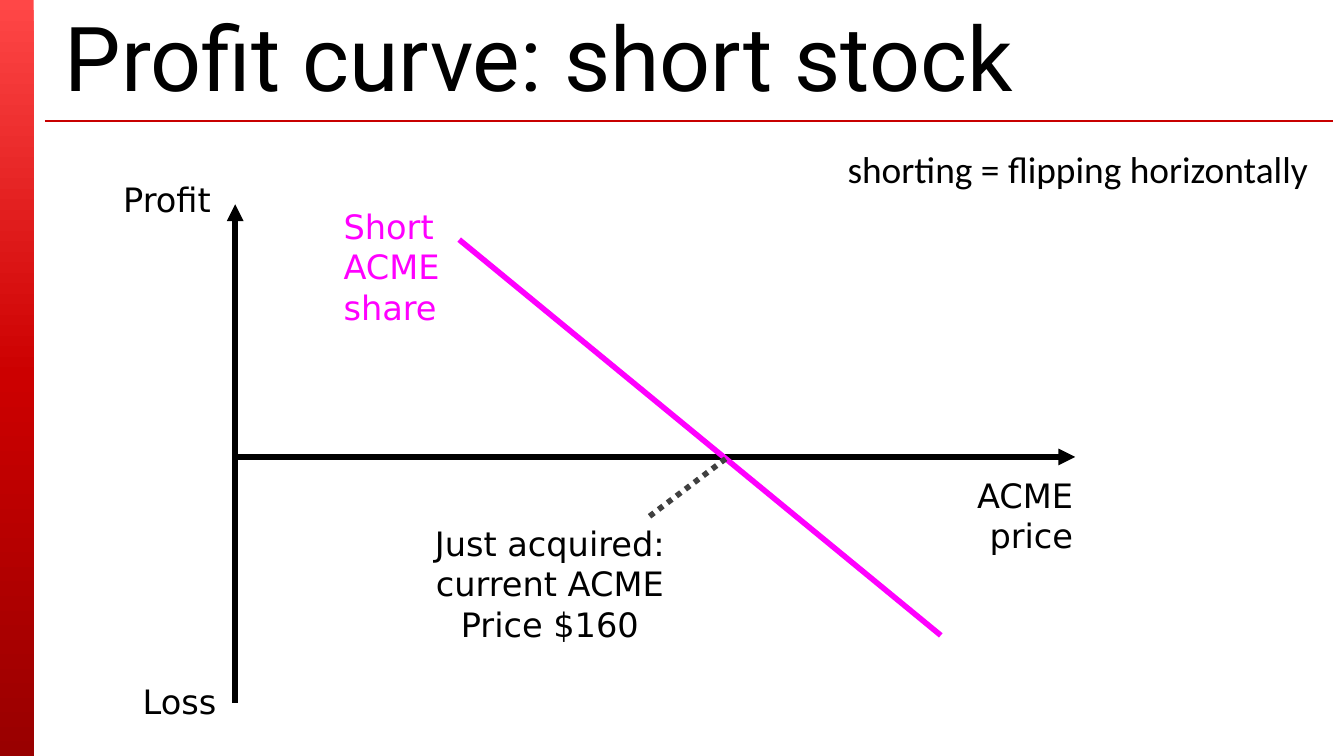
"""Build a slide showing the profit curve of a short stock position."""
from copy import deepcopy
from dataclasses import dataclass

from pptx import Presentation
from pptx.dml.color import RGBColor
from pptx.enum.dml import MSO_LINE
from pptx.enum.shapes import MSO_CONNECTOR, MSO_SHAPE
from pptx.enum.text import MSO_ANCHOR, MSO_AUTO_SIZE, PP_ALIGN
from pptx.oxml.ns import qn
from pptx.shapes.base import BaseShape
from pptx.slide import Slide
from pptx.text.text import TextFrame
from pptx.util import Pt


@dataclass(frozen=True)
class Theme:
    black: str = "000000"
    white: str = "FFFFFF"
    magenta: str = "FF00FF"
    gray: str = "404040"
    red: str = "C80000"
    band: tuple = ((0, "FF4747"), (0.5, "CC0000"), (1, "990000"))
    title_font: str = "Roboto"
    label_font: str = "DejaVu Sans"
    note_font: str = "Calibri"
    title_size: float = 48
    label_size: float = 18
    note_size: float = 20
    thick: float = 3
    thin: float = 0.75


T = Theme()


@dataclass(frozen=True)
class Label:
    lines: tuple
    box: tuple
    align: PP_ALIGN = PP_ALIGN.RIGHT
    color: str = T.black


@dataclass(frozen=True)
class Line:
    begin: tuple
    end: tuple
    color: str = T.black
    width: float = T.thick
    arrow: bool = False
    dotted: bool = False


W, H = 720, 405
ORIGIN = (126, 244.8)
PRICE = (390, 244.8)

RULE = Line((24, 64.8), (714, 64.8), T.red, T.thin)
LINES = (
    Line((ORIGIN[0], 109.5), (ORIGIN[0], 376.5), arrow=True),
    Line((576, ORIGIN[1]), ORIGIN, arrow=True),
    Line((246, 128.4), (504, 340.4), T.magenta),
    Line((348, 276.6), PRICE, T.gray, dotted=True),
)
LABELS = (
    Label(("ACME price",), (504, 250.8, 78, 51)),
    Label(("Short", "ACME share"), (177, 106.8, 108, 72.7), PP_ALIGN.LEFT, T.magenta),
    Label(("Just acquired: current ACME Price $160",), (216.6, 276.6, 156, 72.7), PP_ALIGN.CENTER),
    Label(("Profit",), (36, 92.4, 84, 29)),
    Label(("Loss",), (39, 361, 84, 29)),
)
NOTE = Label(("shorting = flipping horizontally",), (426, 74.2, 282, 32.4))


def rgb(color: str) -> RGBColor:
    """Turn a hex string into a colour."""
    return RGBColor.from_string(color)


def place(box: tuple) -> tuple:
    """Turn left, top, width and height into point lengths."""
    return tuple(Pt(v) for v in box)


def write(tf: TextFrame, label: Label, font: str, size: float, anchor: MSO_ANCHOR) -> None:
    """Fill a text frame with one paragraph per line of the label."""
    tf.word_wrap = True
    tf.auto_size = MSO_AUTO_SIZE.NONE
    tf.vertical_anchor = anchor
    for i, text in enumerate(label.lines):
        p = tf.add_paragraph() if i else tf.paragraphs[0]
        p.alignment = label.align
        r = p.add_run()
        r.text = text
        r.font.name = font
        r.font.size = Pt(size)
        r.font.color.rgb = rgb(label.color)


def add_rect(s: Slide, box: tuple) -> BaseShape:
    """Add a rectangle without shadow or outline."""
    sp = s.shapes.add_shape(MSO_SHAPE.RECTANGLE, *place(box))
    sp.shadow.inherit = False
    sp.line.fill.background()
    return sp


def add_band(s: Slide) -> None:
    """Add the red gradient band on the left edge."""
    sp = add_rect(s, (0, 0, 18, H))
    sp.fill.gradient()
    sp.fill.gradient_angle = 270
    stops = sp._element.spPr.find(qn("a:gradFill")).find(qn("a:gsLst"))
    stops.append(deepcopy(stops[0]))
    for stop, (position, color) in zip(sp.fill.gradient_stops, T.band):
        stop.position = position
        stop.color.rgb = rgb(color)


def add_line(s: Slide, line: Line) -> None:
    """Add a straight line, with an arrowhead at its beginning if asked."""
    cx = s.shapes.add_connector(MSO_CONNECTOR.STRAIGHT, *place(line.begin + line.end))
    cx.line.color.rgb = rgb(line.color)
    cx.line.width = Pt(line.width)
    if line.dotted:
        cx.line.dash_style = MSO_LINE.ROUND_DOT
    if line.arrow:
        ln = cx.line._get_or_add_ln()
        ln.append(ln.makeelement(qn("a:headEnd"), {"type": "triangle"}))
    spPr = cx._element.spPr
    spPr.append(spPr.makeelement(qn("a:effectLst"), {}))


def add_title(s: Slide, text: str) -> None:
    """Move and fill the title placeholder."""
    sp = s.shapes.title
    box = (27.4, 10.8, 690, 38.2)
    sp.left, sp.top, sp.width, sp.height = place(box)
    label = Label((text,), box, PP_ALIGN.LEFT)
    write(sp.text_frame, label, T.title_font, T.title_size, MSO_ANCHOR.MIDDLE)


def add_label(s: Slide, label: Label) -> None:
    """Add a text box for a part of the diagram."""
    sp = s.shapes.add_textbox(*place(label.box))
    write(sp.text_frame, label, T.label_font, T.label_size, MSO_ANCHOR.TOP)


def add_note(s: Slide, label: Label) -> None:
    """Add the white rectangle holding the remark."""
    sp = add_rect(s, label.box)
    sp.fill.solid()
    sp.fill.fore_color.rgb = rgb(T.white)
    write(sp.text_frame, label, T.note_font, T.note_size, MSO_ANCHOR.MIDDLE)


def main() -> None:
    """Build and save the slide."""
    prs = Presentation()
    prs.slide_width, prs.slide_height = Pt(W), Pt(H)
    s = prs.slides.add_slide(prs.slide_layouts[5])
    add_band(s)
    add_title(s, "Profit curve: short stock")
    for line in (RULE, *LINES):
        add_line(s, line)
    for label in LABELS:
        add_label(s, label)
    add_note(s, NOTE)
    prs.save("out.pptx")


if __name__ == "__main__":
    main()
